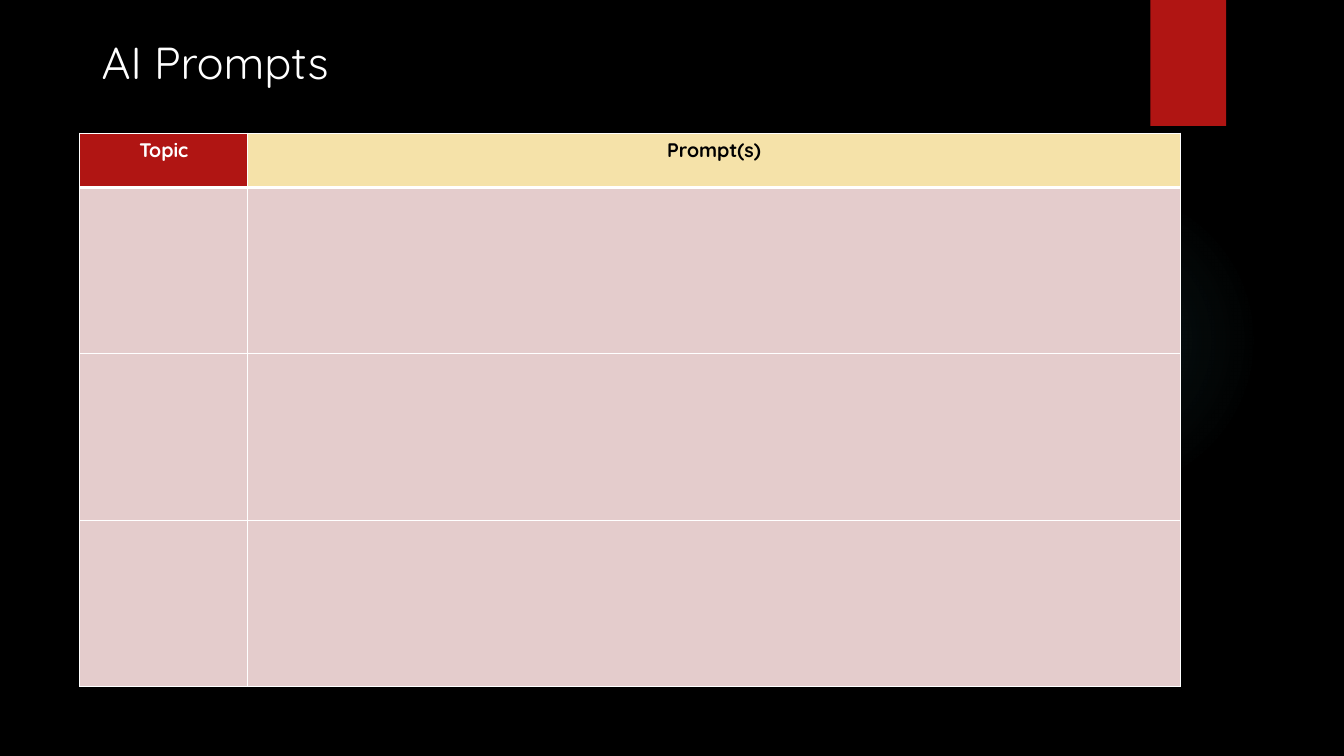
from dataclasses import dataclass

from pptx import Presentation
from pptx.dml.color import RGBColor
from pptx.enum.shapes import MSO_SHAPE
from pptx.enum.text import MSO_AUTO_SIZE, PP_ALIGN
from pptx.oxml import parse_xml
from pptx.oxml.ns import nsdecls, qn
from pptx.shapes.autoshape import Shape
from pptx.slide import Slide
from pptx.table import _Cell
from pptx.text.text import TextFrame
from pptx.util import Pt

ELLIPSE = MSO_SHAPE.OVAL
RECTANGLE = MSO_SHAPE.RECTANGLE
LEFT = PP_ALIGN.LEFT
CENTER = PP_ALIGN.CENTER
FIT_SHAPE = MSO_AUTO_SIZE.SHAPE_TO_FIT_TEXT

BLACK = RGBColor(0x00, 0x00, 0x00)
WHITE = RGBColor(0xFF, 0xFF, 0xFF)
RED = RGBColor(0xB0, 0x15, 0x13)
CREAM = RGBColor(0xF5, 0xE2, 0xA9)
PINK = RGBColor(0xE4, 0xCC, 0xCC)
TEAL = RGBColor(0x50, 0xB9, 0xC1)

FONT = "Quicksand"
THIN = 0.75
THICK = 2
HEADER_HEIGHT = 38.9
PROMPT_HEIGHT = 118.8
PROMPT_ROWS = 3
GLOW_STOPS = [(0, 7), (36, 6), (69, 0)]  # position and opacity, in percent


@dataclass
class Box:
    left: float
    top: float
    width: float
    height: float

    def lengths(self) -> list[Pt]:
        return [Pt(value) for value in (self.left, self.top, self.width, self.height)]


@dataclass
class Column:
    heading: str
    width: float
    fill: RGBColor
    color: RGBColor


COLUMNS = [
    Column("Topic", 120.2, RED, WHITE),
    Column("Prompt(s)", 666, CREAM, BLACK),
]


def write_text(frame: TextFrame, text: str, *, size: float, color: RGBColor,
               bold: bool = False, align: PP_ALIGN = LEFT) -> None:
    paragraph = frame.paragraphs[0]
    paragraph.alignment = align
    run = paragraph.add_run()
    run.text = text
    run.font.name = FONT
    run.font.size = Pt(size)
    run.font.bold = bold
    run.font.color.rgb = color


def add_plain_shape(slide: Slide, kind: MSO_SHAPE, box: Box, color: RGBColor) -> Shape:
    shape = slide.shapes.add_shape(kind, *box.lengths())
    shape.shadow.inherit = False
    shape.fill.solid()
    shape.fill.fore_color.rgb = color
    shape.line.fill.background()
    return shape


def add_glow(slide: Slide, box: Box) -> None:
    """Draw an ellipse that fades from its centre to nothing."""
    shape = add_plain_shape(slide, ELLIPSE, box, TEAL)
    stops = "".join(
        f'<a:gs pos="{position * 1000}"><a:srgbClr val="{TEAL}">'
        f'<a:alpha val="{opacity * 1000}"/></a:srgbClr></a:gs>'
        for position, opacity in GLOW_STOPS
    )
    gradient = parse_xml(
        f'<a:gradFill {nsdecls("a")} rotWithShape="1"><a:gsLst>{stops}</a:gsLst>'
        '<a:path path="circle"><a:fillToRect l="50000" t="50000" r="50000" b="50000"/>'
        "</a:path></a:gradFill>"
    )
    properties = shape._element.spPr
    properties.replace(properties.find(qn("a:solidFill")), gradient)


def style_cell(cell: _Cell, fill: RGBColor, top: float, bottom: float) -> None:
    """Set the cell's white borders, then its fill, in the order the schema needs."""
    properties = cell._tc.get_or_add_tcPr()
    for side, width in (("L", THIN), ("R", THIN), ("T", top), ("B", bottom)):
        properties.append(parse_xml(
            f'<a:ln{side} {nsdecls("a")} w="{Pt(width)}"><a:solidFill>'
            f'<a:srgbClr val="{WHITE}"/></a:solidFill></a:ln{side}>'
        ))
    cell.fill.solid()
    cell.fill.fore_color.rgb = fill


def add_prompt_table(slide: Slide, left: float, top: float) -> None:
    heights = [HEADER_HEIGHT] + [PROMPT_HEIGHT] * PROMPT_ROWS
    box = Box(left, top, sum(column.width for column in COLUMNS), sum(heights))
    table = slide.shapes.add_table(len(heights), len(COLUMNS), *box.lengths()).table
    for row, height in zip(table.rows, heights):
        row.height = Pt(height)
    for index, column in enumerate(COLUMNS):
        table.columns[index].width = Pt(column.width)
        header = table.cell(0, index)
        style_cell(header, column.fill, THIN, THICK)
        write_text(header.text_frame, column.heading, size=14, color=column.color,
                   bold=True, align=CENTER)
        for row_index in range(1, len(heights)):
            style_cell(table.cell(row_index, index), PINK,
                       THICK if row_index == 1 else THIN, THIN)


def add_title(slide: Slide, text: str, box: Box) -> None:
    frame = slide.shapes.add_textbox(*box.lengths()).text_frame
    frame.word_wrap = True
    frame.auto_size = FIT_SHAPE
    write_text(frame, text, size=32, color=WHITE)


def main() -> None:
    presentation = Presentation()
    presentation.slide_width = Pt(960)
    presentation.slide_height = Pt(540)
    slide = presentation.slides.add_slide(presentation.slide_layouts[6])
    slide.background.fill.solid()
    slide.background.fill.fore_color.rgb = BLACK

    add_glow(slide, Box(677.5, 131.8, 221.8, 221.8))
    add_plain_shape(slide, RECTANGLE, Box(821.8, 0, 54, 90), RED)
    add_prompt_table(slide, 56.9, 95)
    add_title(slide, "AI Prompts", Box(65.5, 20.9, 216, 46))
    presentation.save("out.pptx")


if __name__ == "__main__":
    main()
